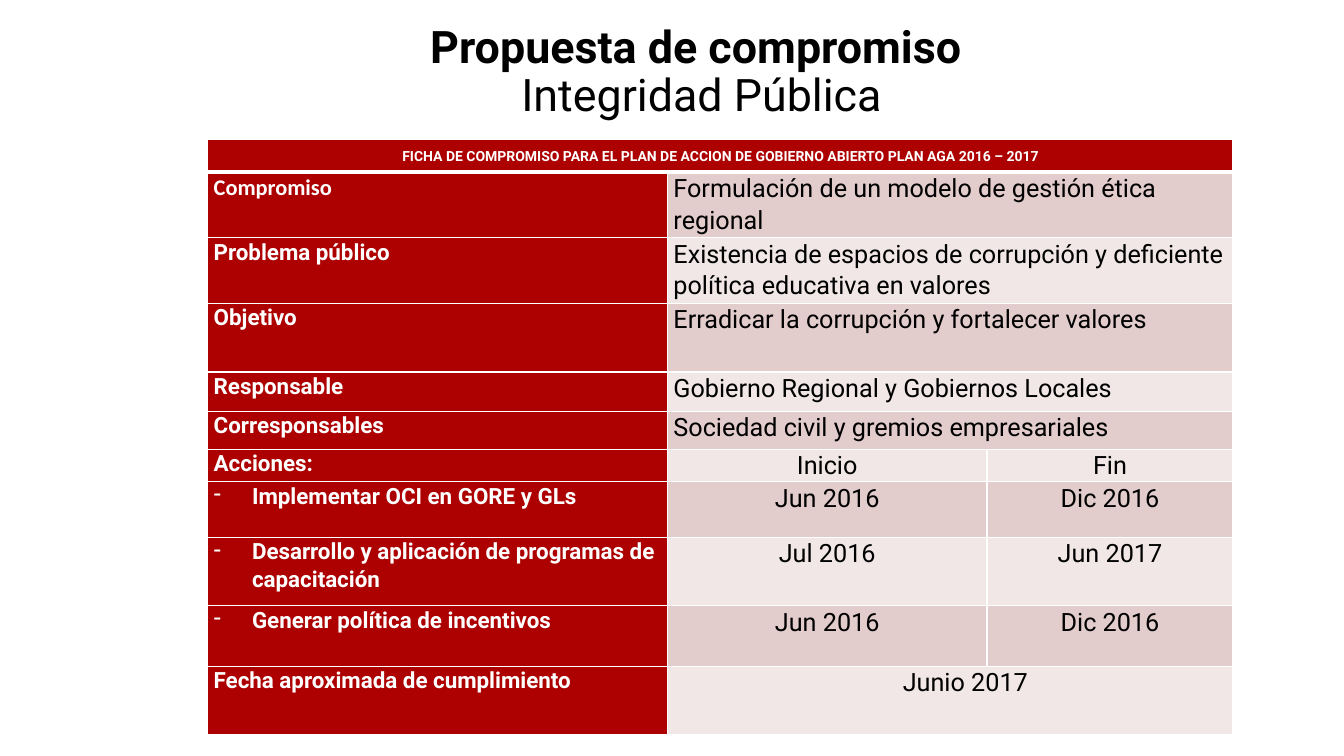
from lxml.etree import SubElement
from pptx import Presentation
from pptx.dml.color import RGBColor
from pptx.enum.text import MSO_ANCHOR, PP_ALIGN
from pptx.oxml import parse_xml
from pptx.oxml.ns import nsdecls, qn
from pptx.util import Inches, Pt

RED, WHITE, BLACK = "AD0101", "FFFFFF", "000000"
BANDS = ["E3CCCC", "F1E7E7"]
WIDTHS = [4.56, 3.17, 2.44]
HEADER = "FICHA DE COMPROMISO PARA EL PLAN DE ACCION DE GOBIERNO ABIERTO PLAN AGA 2016 – 2017"
# Label, values and height of each row
ROWS = [
    ("Compromiso", ["Formulación de un modelo de gestión ética regional"], 0.65),
    ("Problema público",
     ["Existencia de espacios de corrupción y deficiente política educativa en valores"], 0.65),
    ("Objetivo", ["Erradicar la corrupción y fortalecer valores"], 0.68),
    ("Responsable", ["Gobierno Regional y Gobiernos Locales"], 0.39),
    ("Corresponsables", ["Sociedad civil y gremios empresariales"], 0.38),
    ("Acciones:", ["Inicio", "Fin"], 0.3),
    ("Implementar OCI en GORE y GLs", ["Jun 2016", "Dic 2016"], 0.55),
    ("Desarrollo y aplicación de programas de capacitación", ["Jul 2016", "Jun 2017"], 0.68),
    ("Generar política de incentivos", ["Jun 2016", "Dic 2016"], 0.6),
    ("Fecha aproximada de cumplimiento", ["Junio 2017"], 0.68),
]
ACTIONS = range(7, 10)
LAST = len(ROWS)


def color(text):
    return RGBColor.from_string(text)


def style(run, size, tone, bold, font="Roboto"):
    run.font.size = Pt(size)
    run.font.name = font
    run.font.bold = bold
    run.font.color.rgb = color(tone)


def border(cell, bottom):
    """Draw white lines around a cell; bottom is the lower line's width in points."""
    props = cell._tc.get_or_add_tcPr()
    for place, (side, width) in enumerate(zip("LRTB", [1, 1, 1, bottom])):
        props.insert(place, parse_xml(
            f'<a:ln{side} {nsdecls("a")} w="{Pt(width)}"><a:solidFill>'
            f'<a:srgbClr val="{WHITE}"/></a:solidFill></a:ln{side}>'))


def write(cell, text, size, tone, bold, align=PP_ALIGN.LEFT, font="Roboto"):
    cell.text_frame.text = text
    line = cell.text_frame.paragraphs[0]
    line.alignment = align
    line.line_spacing = 1.07
    style(line.runs[0], size, tone, bold, font)
    return line


def indent(line, left, first=0):
    props = line._p.get_or_add_pPr()
    props.set("marL", str(Inches(left)))
    props.set("indent", str(Inches(first)))
    return props


def add_title(slide):
    box = slide.shapes.add_textbox(Inches(3.33), Inches(0), Inches(7.26), Inches(1.45))
    frame = box.text_frame
    frame.word_wrap = True
    frame.vertical_anchor = MSO_ANCHOR.MIDDLE
    frame.text = "Propuesta de compromiso \vIntegridad Pública"
    line = frame.paragraphs[0]
    line.alignment = PP_ALIGN.CENTER
    line.line_spacing = 0.9
    for run, bold in zip(line.runs, [True, False]):
        style(run, 32, BLACK, bold)


def add_grid(slide):
    """Add the table with its sizes, fills and lines."""
    heights = [0.33] + [height for _, _, height in ROWS]
    grid = slide.shapes.add_table(
        len(heights), len(WIDTHS), Inches(2.06), Inches(1.38),
        Inches(sum(WIDTHS)), Inches(sum(heights))).table
    for column, width in zip(grid.columns, WIDTHS):
        column.width = Inches(width)
    for index, (row, height) in enumerate(zip(grid.rows, heights)):
        row.height = Inches(height)
        for place, cell in enumerate(row.cells):
            cell.margin_left = cell.margin_right = Inches(0.06)
            cell.margin_top = cell.margin_bottom = 0
            cell.fill.solid()
            tone = RED if index == 0 or place == 0 else BANDS[(index - 1) % 2]
            cell.fill.fore_color.rgb = color(tone)
            border(cell, 3 if index == 0 else 1)
    return grid


def fill_row(grid, index, label, values):
    font = "Calibri" if index == 1 else "Roboto"
    line = write(grid.cell(index, 0), label, 16, WHITE, True, font=font)
    if index in ACTIONS:
        SubElement(indent(line, 0.38, -0.38), qn("a:buChar"), char="-")
    if len(values) == 1:
        grid.cell(index, 1).merge(grid.cell(index, 2))
    centred = len(values) == 2 or index == LAST
    align = PP_ALIGN.CENTER if centred else PP_ALIGN.LEFT
    for place, value in enumerate(values, 1):
        line = write(grid.cell(index, place), value, 18, BLACK, False, align)
        if index == LAST:
            indent(line, 0.3)


def main():
    deck = Presentation()
    deck.slide_width, deck.slide_height = Inches(13.33), Inches(7.5)
    slide = deck.slides.add_slide(deck.slide_layouts[6])
    add_title(slide)
    grid = add_grid(slide)
    head = grid.cell(0, 0)
    head.merge(grid.cell(0, 2))
    head.vertical_anchor = MSO_ANCHOR.MIDDLE
    write(head, HEADER, 10, WHITE, True, PP_ALIGN.CENTER)
    for index, (label, values, _) in enumerate(ROWS, 1):
        fill_row(grid, index, label, values)
    deck.save("out.pptx")


if __name__ == "__main__":
    main()
